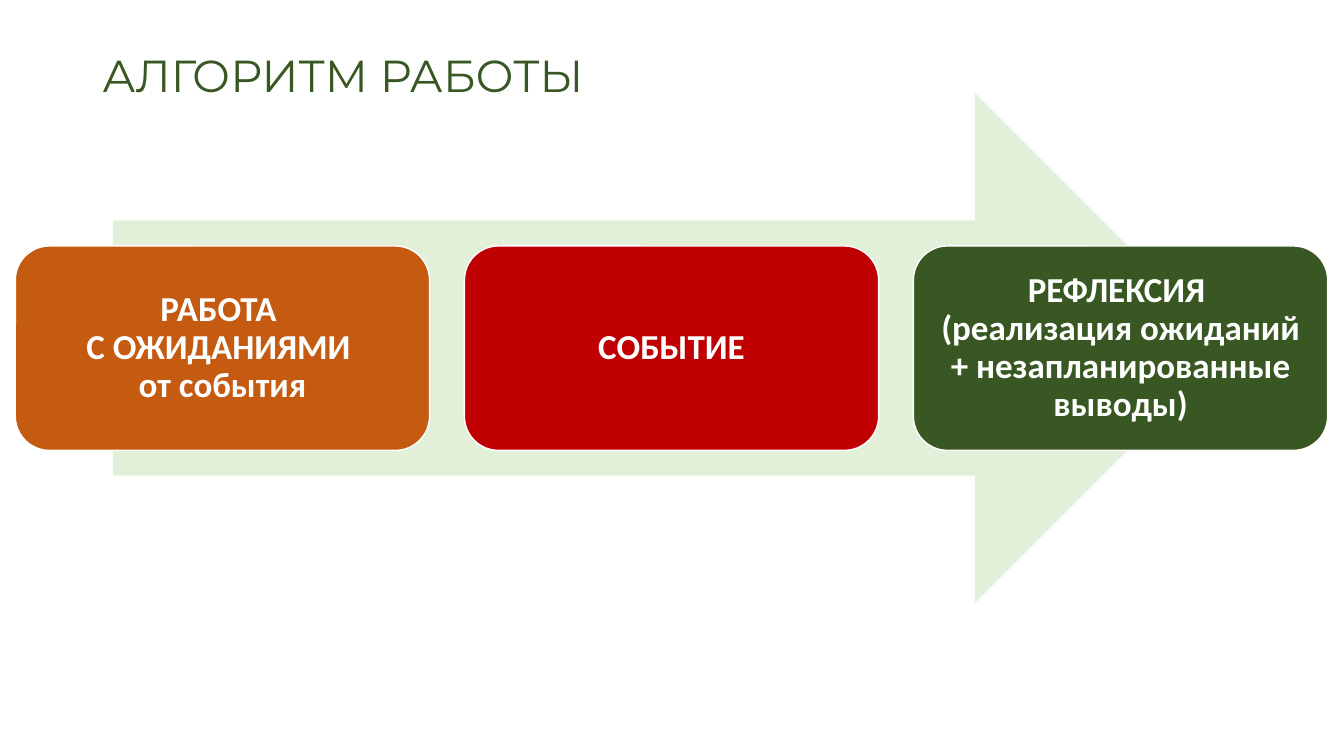
import pptx
import pptx.util
import pptx.dml.color
import pptx.enum.shapes
import pptx.enum.text

Pt = pptx.util.Pt
SHAPE = pptx.enum.shapes.MSO_SHAPE
ALIGN = pptx.enum.text.PP_ALIGN

# Content
TITLE = "АЛГОРИТМ РАБОТЫ"
STEPS = [
    ("C55A11", ["РАБОТА ", "С ОЖИДАНИЯМИ ", "от события"]),
    ("C00000", ["СОБЫТИЕ"]),
    ("385723", ["РЕФЛЕКСИЯ ",
                "(реализация ожиданий + незапланированные выводы)"]),
]

# Layout in points
SLIDE_W, SLIDE_H = 960, 540
TITLE_BOX = (66, 28.8, 828, 53.3)
ARROW_BOX = (80.6, 66.4, 798, 364.4)
STEP_LEFT, STEP_TOP, STEP_W, STEP_H = 10.95, 175.7, 295.9, 146
STEP_PITCH = 320.75


def color(hex_code):
    return pptx.dml.color.RGBColor.from_string(hex_code)


def add_shape(s, kind, box, fill, line=None):
    sp = s.shapes.add_shape(kind, *[Pt(v) for v in box])
    sp.shadow.inherit = False
    sp.fill.solid()
    sp.fill.fore_color.rgb = color(fill)
    if line:
        sp.line.color.rgb = color(line)
        sp.line.width = Pt(1)
    else:
        sp.line.fill.background()
    return sp


def write(sp, lines, align, font, size, fill, bold=False):
    tf = sp.text_frame
    tf.word_wrap = True
    tf.vertical_anchor = pptx.enum.text.MSO_ANCHOR.MIDDLE
    p = tf.paragraphs[0]
    p.alignment = align
    p.line_spacing = 0.9
    for i, text in enumerate(lines):
        if i:
            p.add_line_break()
        r = p.add_run()
        r.text = text
        r.font.name = font
        r.font.size = Pt(size)
        r.font.bold = bold
        r.font.color.rgb = color(fill)
    return tf


prs = pptx.Presentation()
prs.slide_width, prs.slide_height = Pt(SLIDE_W), Pt(SLIDE_H)
s = prs.slides.add_slide(prs.slide_layouts[6])

# Title
title = s.shapes.add_textbox(*[Pt(v) for v in TITLE_BOX])
write(title, [TITLE], ALIGN.LEFT, "Montserrat", 32, "385723")

# Background arrow
add_shape(s, SHAPE.RIGHT_ARROW, ARROW_BOX, "E2F0D9")

# Steps
for i, (fill, lines) in enumerate(STEPS):
    box = (STEP_LEFT + i * STEP_PITCH, STEP_TOP, STEP_W, STEP_H)
    step = add_shape(s, SHAPE.ROUNDED_RECTANGLE, box, fill, "FFFFFF")
    tf = write(step, lines, ALIGN.CENTER, "Calibri", 25, "FFFFFF", True)
    tf.margin_left = tf.margin_right = Pt(7.2)
    tf.margin_top = tf.margin_bottom = Pt(7.2)
    # Line breaks take the size of the text around them
    tf.paragraphs[0].font.size = Pt(25)

prs.save("out.pptx")
